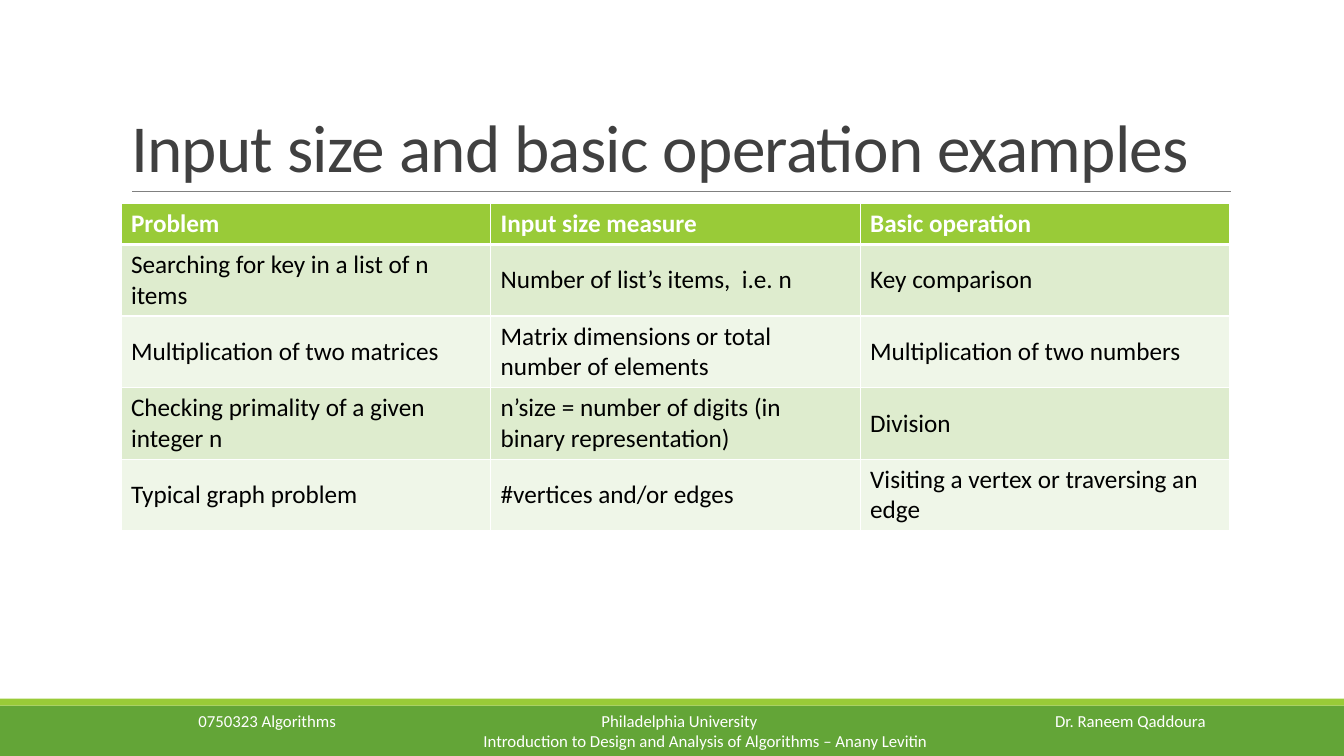
from lxml import etree
from pptx import Presentation
from pptx.dml.color import RGBColor
from pptx.enum import shapes, text
from pptx.oxml import ns
from pptx.util import Pt

FONT = "Calibri"
COLOURS = {
    "white": "FFFFFF",
    "black": "000000",
    "title": "404040",
    "rule": "808080",
    "lime": "99CB38",
    "green": "63A537",
    "band_dark": "DEECCE",
    "band_light": "EFF6E8",
}
ROWS = [
    ("Problem", "Input size measure", "Basic operation"),
    ("Searching for key in a list of n items",
     "Number of list’s items,  i.e. n", "Key comparison"),
    ("Multiplication of two matrices",
     "Matrix dimensions or total number of elements",
     "Multiplication of two numbers"),
    ("Checking primality of a given integer n",
     "n’size = number of digits (in binary representation)", "Division"),
    ("Typical graph problem", "#vertices and/or edges",
     "Visiting a vertex or traversing an edge"),
]
FOOTER_LINES = [
    ("0750323 Algorithms\tPhiladelphia University\tDr. Raneem Qaddoura",
     text.PP_ALIGN.LEFT),
    ("Introduction to Design and Analysis of Algorithms – Anany Levitin",
     text.PP_ALIGN.CENTER),
]


def colour(name):
    """Return the named colour."""
    return RGBColor.from_string(COLOURS[name])


def style_font(paragraph, size, colour_name, bold=False):
    """Set the font of a whole paragraph."""
    font = paragraph.font
    font.name, font.size, font.bold = FONT, Pt(size), bold
    font.color.rgb = colour(colour_name)


def add_bar(slide, left, top, width, height, colour_name):
    """Add a plain filled rectangle."""
    bar = slide.shapes.add_shape(
        shapes.MSO_SHAPE.RECTANGLE, Pt(left), Pt(top), Pt(width), Pt(height))
    bar.shadow.inherit = False
    bar.fill.solid()
    bar.fill.fore_color.rgb = colour(colour_name)
    bar.line.fill.background()


def add_footer(slide, left, top, width, height):
    """Add the two-tone footer band with its course details."""
    stripe = 5
    add_bar(slide, left, top + stripe, width, height - stripe, "green")
    add_bar(slide, left, top, width, stripe, "lime")
    box = slide.shapes.add_textbox(
        Pt(left + 134.6), Pt(top + stripe), Pt(738.7), Pt(height - stripe))
    frame = box.text_frame
    frame.word_wrap = True
    for index, (line, alignment) in enumerate(FOOTER_LINES):
        paragraph = frame.add_paragraph() if index else frame.paragraphs[0]
        paragraph.text = line
        paragraph.alignment = alignment
        style_font(paragraph, 12, "white")
    properties = frame.paragraphs[0]._p.get_or_add_pPr()
    tabs = etree.Element(ns.qn("a:tabLst"))
    for position in (288, 612):
        etree.SubElement(tabs, ns.qn("a:tab"), pos=str(Pt(position)), algn="l")
    properties.insert(0, tabs)


def add_title(slide, left, top, width, height):
    """Place the title and the thin rule beneath it."""
    title = slide.shapes.title
    title.left, title.top = Pt(left), Pt(top)
    title.width, title.height = Pt(width), Pt(height)
    frame = title.text_frame
    frame.text = "Input size and basic operation examples"
    frame.word_wrap = True
    frame.auto_size = text.MSO_AUTO_SIZE.NONE
    frame.vertical_anchor = text.MSO_ANCHOR.BOTTOM
    paragraph = frame.paragraphs[0]
    paragraph.alignment = text.PP_ALIGN.LEFT
    paragraph.line_spacing = 0.85
    style_font(paragraph, 48, "title")
    paragraph.runs[0]._r.get_or_add_rPr().set("spc", "-50")

    bottom = Pt(top + height)
    rule = slide.shapes.add_connector(
        shapes.MSO_CONNECTOR.STRAIGHT, Pt(left + 8), bottom,
        Pt(left + width + 0.6), bottom)
    rule.line.color.rgb = colour("rule")
    rule.line.width = Pt(0.5)
    etree.SubElement(rule._element.spPr, ns.qn("a:effectLst"))


def add_borders(cell, bottom_width, top_width):
    """Draw white borders around a table cell."""
    properties = cell._tc.get_or_add_tcPr()
    widths = {"lnL": 1, "lnR": 1, "lnT": top_width, "lnB": bottom_width}
    for side, width in widths.items():
        line = etree.SubElement(properties, ns.qn(f"a:{side}"), w=str(Pt(width)))
        fill = etree.SubElement(line, ns.qn("a:solidFill"))
        etree.SubElement(fill, ns.qn("a:srgbClr"), val=COLOURS["white"])


def add_examples_table(slide, left, top, width, header_height, row_height):
    """Add the banded table of problems, sizes and operations."""
    columns = len(ROWS[0])
    height = header_height + row_height * (len(ROWS) - 1)
    table = slide.shapes.add_table(
        len(ROWS), columns, Pt(left), Pt(top), Pt(width), Pt(height)).table
    for column in table.columns:
        column.width = Pt(width / columns)
    for row_index, values in enumerate(ROWS):
        header = row_index == 0
        band = "band_dark" if row_index % 2 else "band_light"
        table.rows[row_index].height = Pt(header_height if header else row_height)
        for column_index, value in enumerate(values):
            cell = table.cell(row_index, column_index)
            cell.text = value
            cell.vertical_anchor = text.MSO_ANCHOR.MIDDLE
            add_borders(cell, 3 if header else 1, 3 if row_index == 1 else 1)
            cell.fill.solid()
            cell.fill.fore_color.rgb = colour("lime" if header else band)
            style_font(cell.text_frame.paragraphs[0], 18,
                       "white" if header else "black", header)


def main():
    """Build and save the presentation."""
    presentation = Presentation()
    presentation.slide_width, presentation.slide_height = Pt(960), Pt(540)
    slide = presentation.slides.add_slide(presentation.slide_layouts[5])
    add_footer(slide, 0, 499, 960, 41)
    add_title(slide, 86.4, 22.4, 792, 114.2)
    add_examples_table(slide, 86.4, 145.5, 792, 29.2, 51.1)
    presentation.save("out.pptx")


if __name__ == "__main__":
    main()
